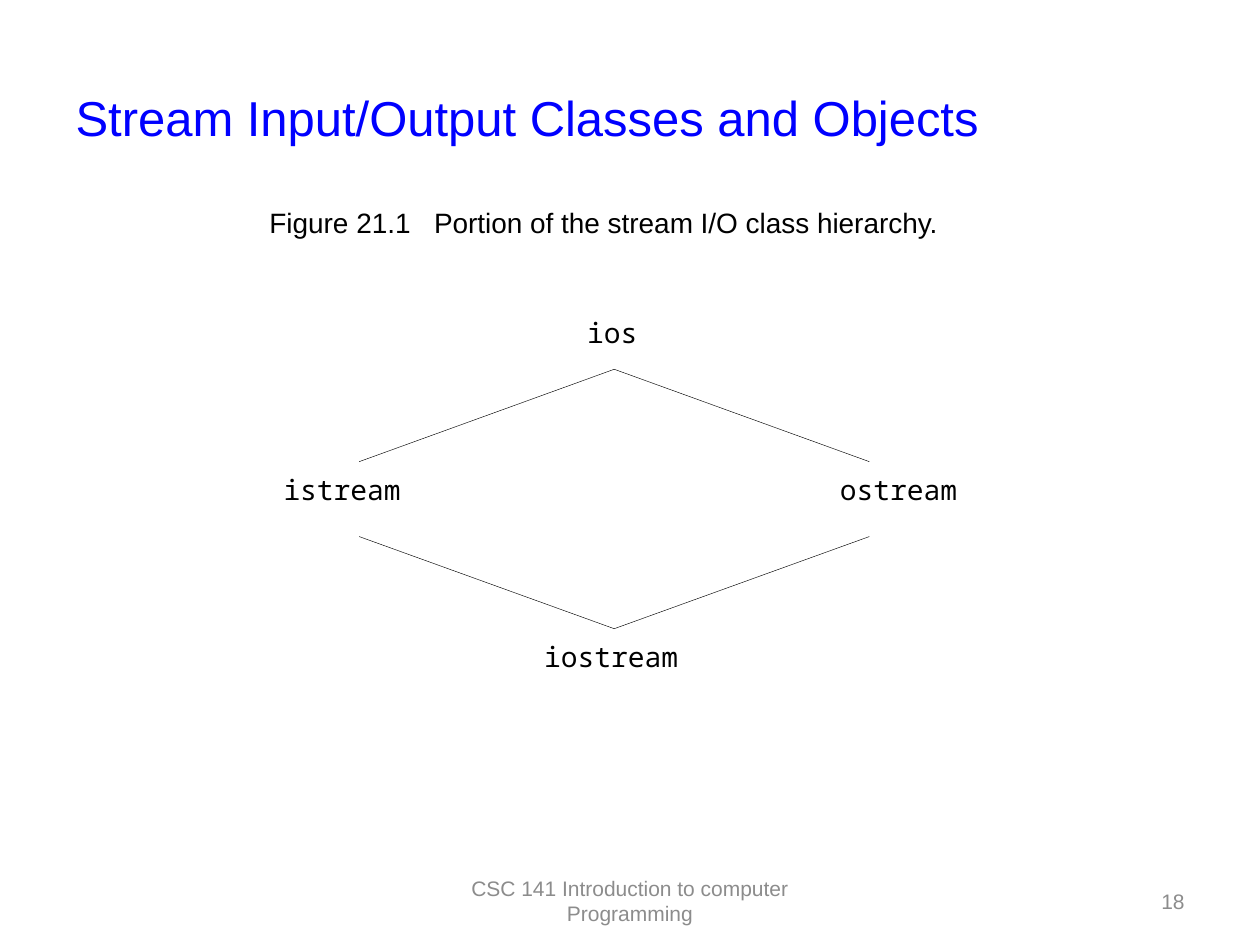
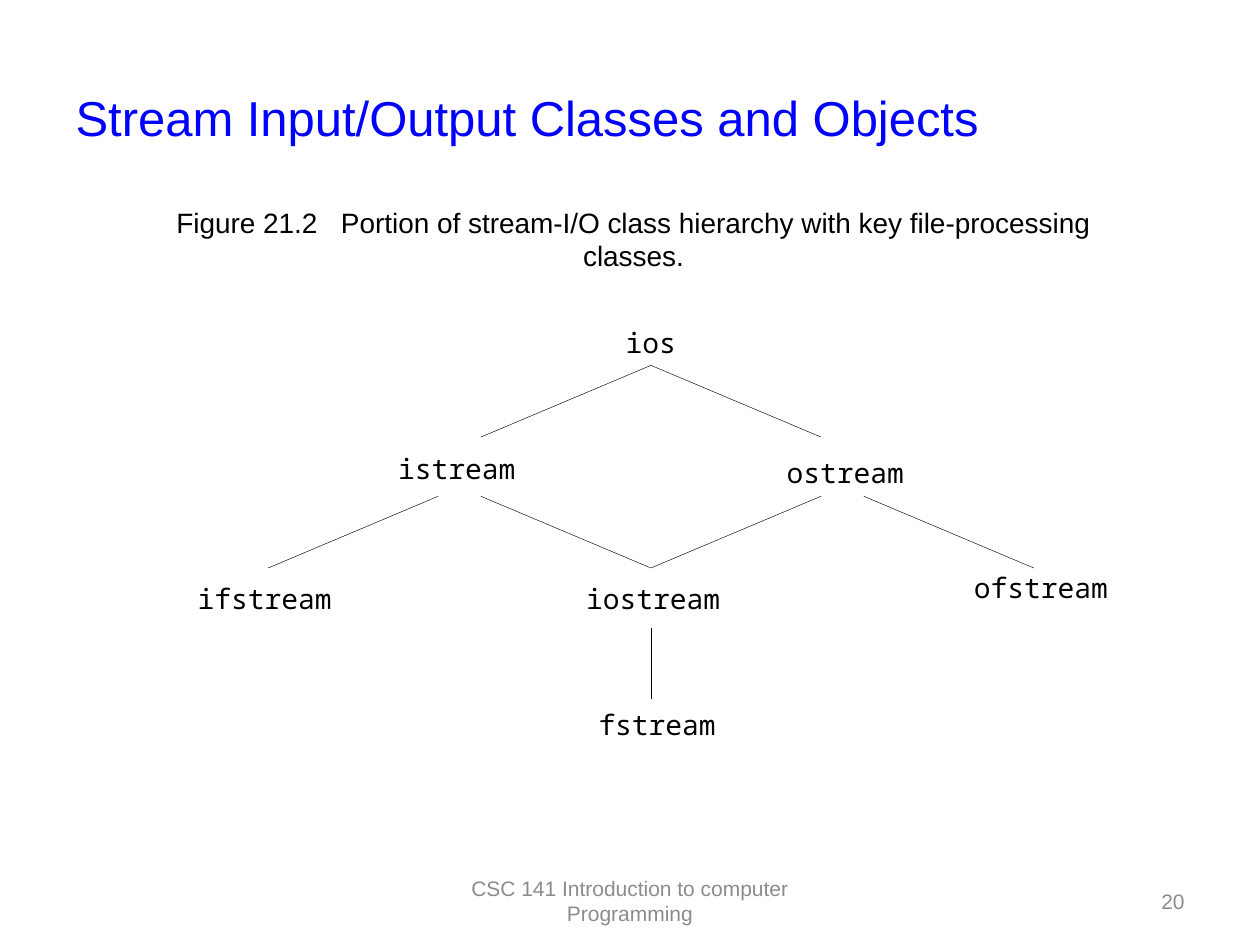
from lxml import etree
from pptx import Presentation
from pptx.dml.color import RGBColor
from pptx.enum import shapes, text
from pptx.oxml import ns
from pptx.util import Pt

COLOURS = {"title": "0000FF", "ink": "000000", "footer": "8C8C8C"}
BODY_FONT, CODE_FONT = "Arial", "Noto Sans Mono"
TITLE = "Stream Input/Output Classes and Objects"
FOOTER = "CSC 141 Introduction to computer Programming"
LINE_WIDTH = 0.25
FOOTER_TOP, FOOTER_HEIGHT = 500.4, 28.8
CAPTION_TOP, CAPTION_HEIGHT = 113.8, 26.6
CAPTION_GAP = 8.9  # extra width of the space after the figure number


def add_span(para, words, size, colour, font=BODY_FONT):
    span = para.add_run()
    span.text = words
    span.font.size = Pt(size)
    span.font.name = font
    span.font.color.rgb = RGBColor.from_string(COLOURS[colour])
    return span


def add_box(page, left, top, width, height, align=text.PP_ALIGN.LEFT):
    """Add an empty wrapping text box; return its frame and first paragraph."""
    box = page.shapes.add_textbox(Pt(left), Pt(top), Pt(width), Pt(height))
    frame = box.text_frame
    frame.word_wrap = True
    para = frame.paragraphs[0]
    para.alignment = align
    return frame, para


def add_title(page):
    title = page.shapes.title
    title.left, title.top, title.width, title.height = Pt(36), Pt(21.6), Pt(648), Pt(90)
    title.text_frame.vertical_anchor = text.MSO_ANCHOR.MIDDLE
    para = title.text_frame.paragraphs[0]
    para.alignment = text.PP_ALIGN.LEFT
    add_span(para, TITLE, 28, "title")


def add_footer(page, left, width, words, align):
    frame, para = add_box(page, left, FOOTER_TOP, width, FOOTER_HEIGHT, align)
    frame.vertical_anchor = text.MSO_ANCHOR.MIDDLE
    add_span(para, words, 12, "footer")


def add_caption(page, left, width, figure, words):
    frame, para = add_box(page, left, CAPTION_TOP, width, CAPTION_HEIGHT,
                          text.PP_ALIGN.CENTER)
    frame.auto_size = text.MSO_AUTO_SIZE.SHAPE_TO_FIT_TEXT
    add_span(para, figure, 16, "ink")
    gap = add_span(para, " ", 16, "ink")
    gap.font._element.set("spc", str(round(CAPTION_GAP * 100)))
    add_span(para, words, 16, "ink")


def add_class_name(page, name, left, top, width, height=28):
    frame, para = add_box(page, left, top, width, height)
    frame.margin_left = frame.margin_right = 0
    frame.margin_top = frame.margin_bottom = 0
    para.line_spacing = 0.64
    add_span(para, name, 16, "ink", CODE_FONT)


def style_line(line):
    line.width = Pt(LINE_WIDTH)
    line.color.rgb = RGBColor.from_string(COLOURS["ink"])


def add_chevron_line(page, apex_x, apex_y, half_width, end_y):
    """Join a class at the apex to two classes at either side."""
    builder = page.shapes.build_freeform(Pt(apex_x + half_width), Pt(end_y))
    builder.add_line_segments(
        [(Pt(apex_x), Pt(apex_y)), (Pt(apex_x - half_width), Pt(end_y))], close=False)
    outline = builder.convert_to_shape()
    outline.shadow.inherit = False
    outline.fill.background()
    style_line(outline.line)


def add_branch(page, start_x, start_y, end_x, end_y):
    branch = page.shapes.add_connector(
        shapes.MSO_CONNECTOR.STRAIGHT, Pt(start_x), Pt(start_y), Pt(end_x), Pt(end_y))
    style_line(branch.line)
    etree.SubElement(branch._element.spPr, ns.qn("a:effectLst"))


def add_page(deck, number):
    page = deck.slides.add_slide(deck.slide_layouts[5])
    add_title(page)
    add_footer(page, 246, 228, FOOTER, text.PP_ALIGN.CENTER)
    add_footer(page, 516, 168, number, text.PP_ALIGN.RIGHT)
    return page


def build_stream_hierarchy(deck):
    page = add_page(deck, "18")
    add_caption(page, 78, 534, "Figure 21.1", "Portion of the stream I/O class hierarchy.")
    for name, left, top, width in (("ios", 335.5, 186.5, 48),
                                   ("istream", 162, 276, 96),
                                   ("ostream", 480, 276, 90),
                                   ("iostream", 311, 371.5, 91)):
        add_class_name(page, name, left, top, width, 20)
    add_chevron_line(page, 351, 211, 145.8, 263.8)
    add_chevron_line(page, 351, 359.3, 145.8, 306.6)


def build_file_hierarchy(deck):
    page = add_page(deck, "20")
    add_caption(page, 86, 552, "Figure 21.2",
                "Portion of stream-I/O class hierarchy with key file-processing classes.")
    for name, left, top, width in (("ios", 357.5, 192, 45),
                                   ("istream", 227.5, 264, 96),
                                   ("ostream", 449.5, 266.5, 96),
                                   ("ifstream", 113, 338.5, 110),
                                   ("iostream", 335, 338.5, 110),
                                   ("ofstream", 556.5, 332, 110),
                                   ("fstream", 342, 410.5, 96)):
        add_class_name(page, name, left, top, width)
    # Levels of the tree, one drop apart on each link
    centre, reach, drop = 372, 97.2, 41
    ios_foot, stream_foot, iostream_foot = 208.8, 283.6, 358.6
    add_chevron_line(page, centre, ios_foot, reach, ios_foot + drop)
    add_chevron_line(page, centre, stream_foot + drop, reach, stream_foot)
    for side in (-1, 1):
        inner = centre + side * 121.6
        add_branch(page, inner, stream_foot, inner + side * reach, stream_foot + drop)
    add_branch(page, centre, iostream_foot, centre, iostream_foot + drop)


def main():
    deck = Presentation()
    deck.slide_width, deck.slide_height = Pt(720), Pt(540)
    build_stream_hierarchy(deck)
    build_file_hierarchy(deck)
    deck.save("out.pptx")


if __name__ == "__main__":
    main()
